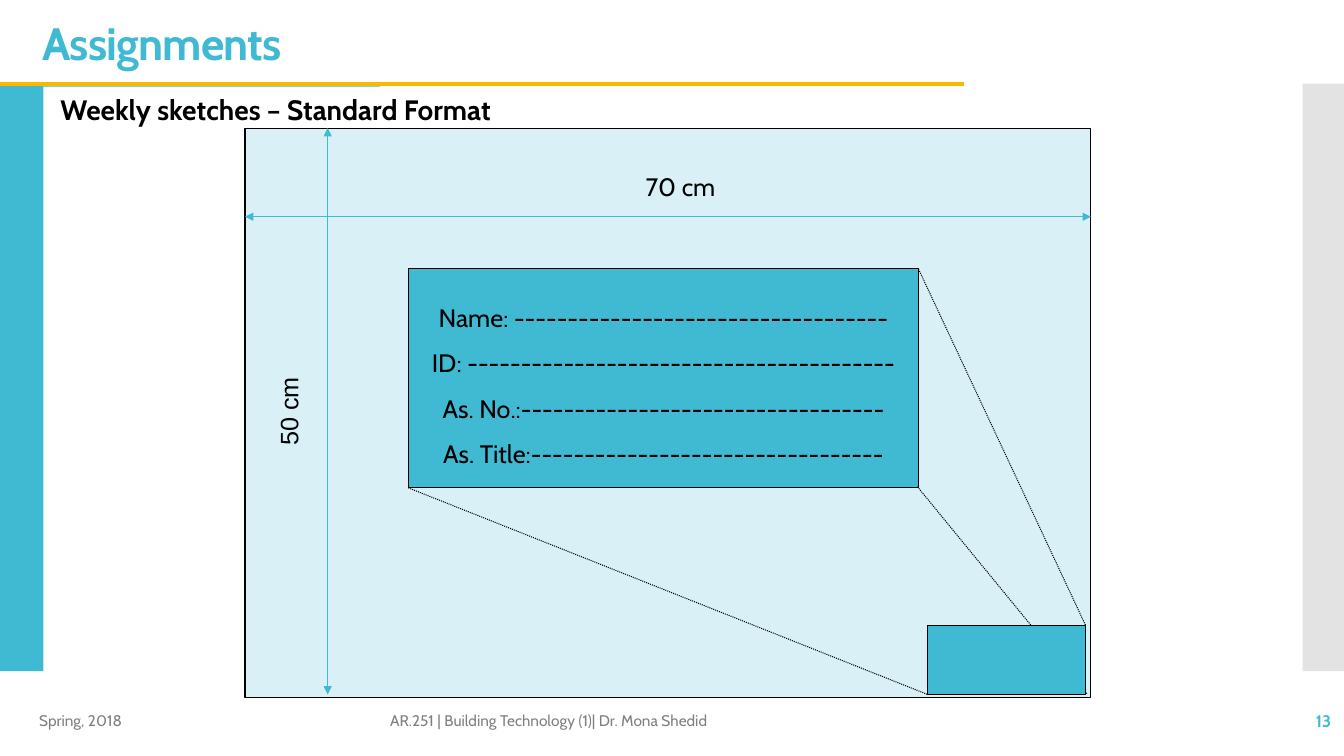
from lxml import etree
from pptx import Presentation
from pptx.dml.color import RGBColor
from pptx.enum.dml import MSO_LINE
from pptx.enum.shapes import MSO_CONNECTOR, MSO_SHAPE
from pptx.enum.text import MSO_ANCHOR, PP_ALIGN
from pptx.oxml.ns import qn
from pptx.util import Inches, Pt

RECT, STRAIGHT = MSO_SHAPE.RECTANGLE, MSO_CONNECTOR.STRAIGHT
TOP, MIDDLE = MSO_ANCHOR.TOP, MSO_ANCHOR.MIDDLE
LEFT, CENTER, RIGHT = PP_ALIGN.LEFT, PP_ALIGN.CENTER, PP_ALIGN.RIGHT
DOTTED = MSO_LINE.ROUND_DOT  # written to the file as sysDot

COLORS = {
    "teal": "40BAD2", "pale": "D9F1F6", "gold": "FAB900", "band": "C8C8C8",
    "footer": "808080", "black": "000000", "white": "FFFFFF",
}

prs = Presentation()
prs.slide_width, prs.slide_height = Inches(13.33), Inches(7.5)
slide = prs.slides.add_slide(prs.slide_layouts[6])
shapes = slide.shapes


def add_box(left, top, width, height, fill, outlined=False):
    box = shapes.add_shape(RECT, Inches(left), Inches(top), Inches(width), Inches(height))
    box.shadow.inherit = False
    box.fill.solid()
    box.fill.fore_color.rgb = RGBColor.from_string(COLORS[fill])
    if outlined:
        box.line.color.rgb = RGBColor.from_string(COLORS["black"])
        box.line.width = Pt(0.75)
    else:
        box.line.fill.background()
    return box


def add_line(start, end, color, width):
    line = shapes.add_connector(STRAIGHT, *[Inches(v) for v in (*start, *end)])
    line.line.color.rgb = RGBColor.from_string(COLORS[color])
    line.line.width = Pt(width)
    etree.SubElement(line._element.spPr, qn("a:effectLst"))
    return line


# Side bands and title rule
add_box(0, 0.83, 3.77, 5.83, "teal")
right_band = add_box(12.92, 0.83, 0.41, 5.83, "band")
band_color = right_band._element.spPr.find(qn("a:solidFill"))[0]
etree.SubElement(band_color, qn("a:alpha"), val="50000")
add_line((0, 0.83), (9.56, 0.83), "gold", 3)
add_box(0.43, 0.86, 3.62, 5.83, "white")

# Drawing sheet
add_box(2.43, 1.28, 8.39, 5.64, "pale", outlined=True)

# Enlarged title block
title_block = add_box(4.05, 2.66, 5.06, 2.18, "teal", outlined=True)
block_frame = title_block.text_frame
block_frame.word_wrap = False
block_frame.vertical_anchor = MIDDLE
fields = [("Name: ", 35), ("ID: ", 40), ("As. No.:", 34), ("As. Title:", 33)]
block_frame.text = "\n".join(label + "-" * dashes for label, dashes in fields)
for field in block_frame.paragraphs:
    field.alignment = CENTER
    field.line_spacing = 1.5
    field.font.name = "Cabin"
    field.font.size = Pt(18)
    field.font.color.rgb = RGBColor.from_string(COLORS["black"])

# Projection lines down to the small title block in the sheet corner
for start, end in [((9.1, 4.83), (10.78, 6.88)),
                   ((9.11, 2.67), (10.77, 6.21)),
                   ((4.05, 4.84), (9.2, 6.89))]:
    add_line(start, end, "black", 0.75).line.dash_style = DOTTED
add_box(9.2, 6.21, 1.57, 0.68, "teal", outlined=True)

# Dimension arrows
for start, end in [((3.25, 1.27), (3.25, 6.89)), ((2.43, 2.15), (10.82, 2.15))]:
    dimension = add_line(start, end, "teal", 0.85)
    for arrowhead in ("a:headEnd", "a:tailEnd"):
        etree.SubElement(dimension.line._get_or_add_ln(), qn(arrowhead), type="triangle")

# Texts: wording, place, font, size, colour, bold, alignment, anchor
texts = [
    ("Assignments", (0.32, 0.17, 4.42, 0.57), "Cabin", 32.4, "teal", True, LEFT, MIDDLE),
    ("Weekly sketches – Standard Format", (0.5, 0.87, 6.62, 0.44),
     "Cabin", 20, "black", True, LEFT, TOP),
    ("70 cm", (6.11, 1.65, 1.28, 0.44), "Cabin", 18, "black", False, CENTER, TOP),
    ("50 cm", (2.66, 3.34, 0.54, 1.48), "Arial", 18, "black", False, CENTER, TOP),
    ("Spring, 2018", (0.29, 6.95, 3, 0.4), "Cabin", 11, "footer", False, LEFT, MIDDLE),
    ("AR.251 | Building Technology (1)| Dr. Mona Shedid", (3.77, 6.95, 7.55, 0.4),
     "Cabin", 11, "footer", False, LEFT, MIDDLE),
    ("13", (11.63, 6.95, 1.67, 0.4), "Cabin", 12, "teal", True, RIGHT, MIDDLE),
]
for wording, place, font, size, color, bold, alignment, anchor in texts:
    frame = shapes.add_textbox(*[Inches(v) for v in place]).text_frame
    frame.word_wrap = True
    frame.vertical_anchor = anchor
    frame.text = wording
    paragraph = frame.paragraphs[0]
    paragraph.alignment = alignment
    paragraph.font.name = font
    paragraph.font.size = Pt(size)
    paragraph.font.bold = bold
    paragraph.font.color.rgb = RGBColor.from_string(COLORS[color])
    if wording == "Assignments":  # tightened heading
        paragraph.line_spacing = 0.9
        paragraph.runs[0]._r.get_or_add_rPr().set("spc", "-60")
    elif wording == "50 cm":  # reads upwards beside its arrow
        frame._txBody.bodyPr.set("vert", "vert270")

prs.save("out.pptx")
